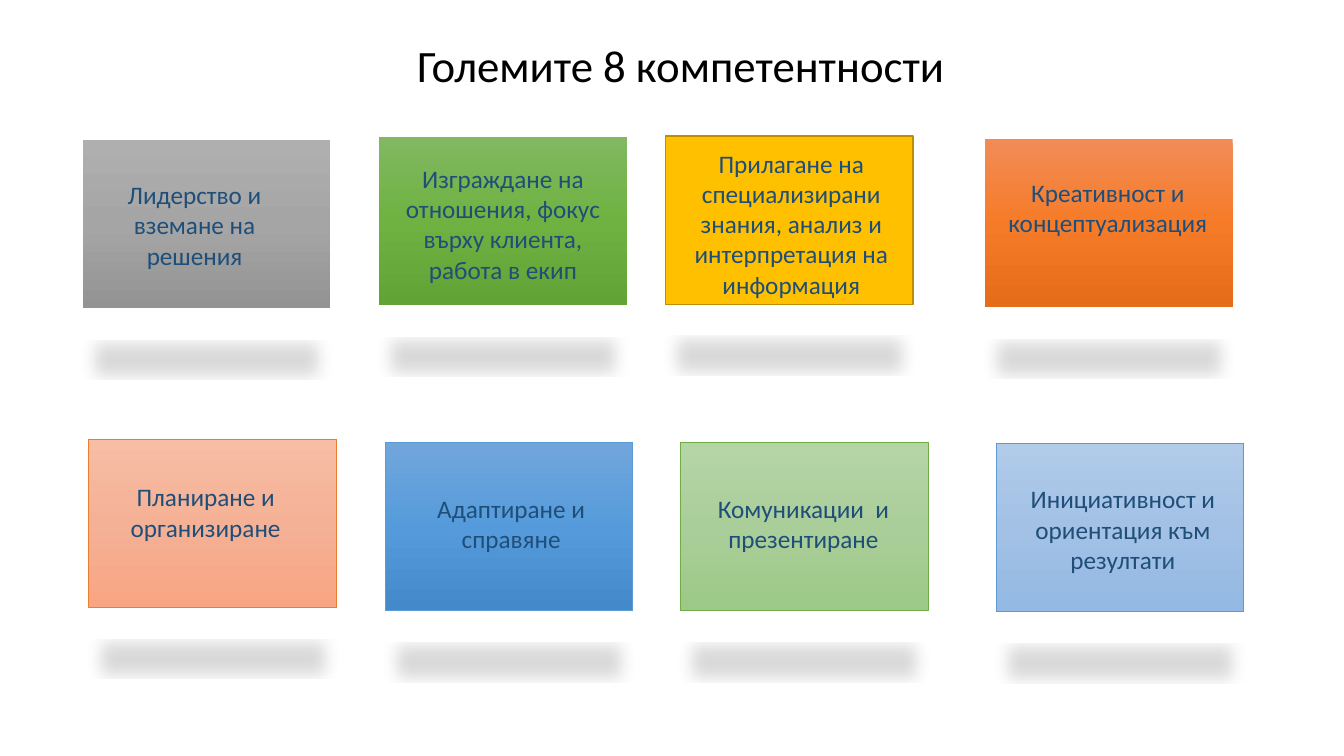
from copy import deepcopy

from lxml import etree
from pptx import Presentation
from pptx.dml.color import RGBColor
from pptx.enum.shapes import MSO_SHAPE
from pptx.enum.text import MSO_ANCHOR, MSO_AUTO_SIZE, PP_ALIGN
from pptx.oxml.ns import qn
from pptx.util import Pt

RECTANGLE = MSO_SHAPE.RECTANGLE
MIDDLE = MSO_ANCHOR.MIDDLE
TOP = MSO_ANCHOR.TOP
GROW = MSO_AUTO_SIZE.SHAPE_TO_FIT_TEXT
NO_FIT = MSO_AUTO_SIZE.NONE
CENTER = PP_ALIGN.CENTER
LEFT = PP_ALIGN.LEFT

FONT = "Calibri"
CARD_WIDTH, CARD_HEIGHT = 177.1, 120.2
LABEL_WIDTH, LINE_HEIGHT, LABEL_MARGINS = 157, 21.8, 7.2

COLORS = {
    "title": "000000",
    "label": "1F4E79",
    "shadow": "000000",
    "gold line": "BD8E00",
    "orange line": "ED7D31",
    "blue line": "5B9BD5",
    "green line": "70AD47",
}

# Top, middle and bottom colour of each card; one colour means a solid fill.
FILLS = {
    "gray": ["AFAFAF", "A5A5A5", "939393"],
    "green": ["81B861", "6FB242", "62A336"],
    "gold": ["FFC000"],
    "orange": ["F18C57", "F67B28", "E56C19"],
    "peach": ["F7BDA5", "F5B196", "F8A582"],
    "blue": ["71A6DB", "559BDB", "448ACA"],
    "light green": ["B5D5A7", "AACE9A", "9CC987"],
    "light blue": ["B1CBE9", "A3C1E5", "93B9E4"],
}

# Card position, fill, line (colour, width), label position, width, line count, text
COMPETENCIES = [
    ((59, 100.1), "gray", None, (60.5, 124.6), LABEL_WIDTH, 3,
     "Лидерство и вземане на решения"),
    ((270.7, 97.9), "green", None, (276.5, 113), 165.6, 4,
     "Изграждане на отношения, фокус върху клиента, работа в екип"),
    ((475.2, 97.2), "gold", ("gold line", 1), (486.7, 102.2), LABEL_WIDTH, 5,
     "Прилагане на специализирани знания, анализ и интерпретация на информация"),
    ((703.4, 99.4), "orange", None, (712.8, 123.1), LABEL_WIDTH, 2,
     "Креативност и концептуализация"),
    ((63.4, 313.9), "peach", ("orange line", 0.5), (68.4, 340.6), LABEL_WIDTH, 2,
     "Планиране и организиране"),
    ((275, 316.1), "blue", ("blue line", 0.5), (286.6, 348.5), LABEL_WIDTH, 2,
     "Адаптиране и справяне"),
    ((486, 316.1), "light green", ("green line", 0.5), (495.4, 348.5), LABEL_WIDTH, 2,
     "Комуникации  и презентиране"),
    ((711.4, 316.8), "light blue", ("blue line", 0.5), (723.6, 342), LABEL_WIDTH, 3,
     "Инициативност и ориентация към резултати"),
]


class SlideBuilder:
    """Holds the font and the current slide."""

    def __init__(self, slide, font):
        self.slide = slide
        self.font = font

    def text(self, left, top, width, height, content, size, color,
             align=CENTER, anchor=TOP, fit=GROW, line_spacing=1.0):
        box = self.slide.shapes.add_textbox(Pt(left), Pt(top), Pt(width), Pt(height))
        frame = box.text_frame
        frame.word_wrap = True
        frame.auto_size = fit
        frame.vertical_anchor = anchor
        paragraph = frame.paragraphs[0]
        paragraph.alignment = align
        paragraph.line_spacing = line_spacing
        run = paragraph.add_run()
        run.text = content
        run.font.name = self.font
        run.font.size = Pt(size)
        run.font.color.rgb = RGBColor.from_string(COLORS[color])

    def card(self, left, top, fill, line):
        shape = self.slide.shapes.add_shape(
            RECTANGLE, Pt(left), Pt(top), Pt(CARD_WIDTH), Pt(CARD_HEIGHT))
        self.fill(shape, FILLS[fill])
        if line:
            color, width = line
            shape.line.color.rgb = RGBColor.from_string(COLORS[color])
            shape.line.width = Pt(width)
        else:
            shape.line.fill.background()
        self.floor_shadow(shape)

    def fill(self, shape, colors):
        """Fill with one solid colour or with a three-stop vertical gradient."""
        if len(colors) == 1:
            shape.fill.solid()
            shape.fill.fore_color.rgb = RGBColor.from_string(colors[0])
            return
        shape.fill.gradient()
        shape.fill.gradient_angle = 270
        stop_list = shape.element.spPr.find(".//" + qn("a:gsLst"))
        stop_list.insert(1, deepcopy(stop_list[0]))
        for index, (stop, color) in enumerate(zip(shape.fill.gradient_stops, colors)):
            stop.position = index / 2
            stop.color.rgb = RGBColor.from_string(color)

    def floor_shadow(self, shape):
        """Cast a flattened, blurred shadow below the shape."""
        shape.shadow.inherit = False
        effects = shape.element.spPr.find(qn("a:effectLst"))
        shadow = etree.SubElement(
            effects, qn("a:outerShdw"), blurRad=str(Pt(12)), dist=str(Pt(25)),
            dir="5400000", sx="90000", sy="-19000", rotWithShape="0")
        color = etree.SubElement(shadow, qn("a:srgbClr"), val=COLORS["shadow"])
        etree.SubElement(color, qn("a:alpha"), val="15000")


def main():
    presentation = Presentation()
    presentation.slide_width = Pt(960)
    presentation.slide_height = Pt(540)
    slide = presentation.slides.add_slide(presentation.slide_layouts[6])
    builder = SlideBuilder(slide, FONT)

    builder.text(290.9, 16.6, 429.1, 64.1, "Големите 8 компетентности", 32, "title",
                 align=LEFT, anchor=MIDDLE, fit=NO_FIT, line_spacing=0.9)
    for position, fill, line, label_position, width, lines, label in COMPETENCIES:
        builder.card(*position, fill, line)
        height = LABEL_MARGINS + lines * LINE_HEIGHT
        builder.text(*label_position, width, height, label, 18, "label")

    presentation.save("out.pptx")


if __name__ == "__main__":
    main()
